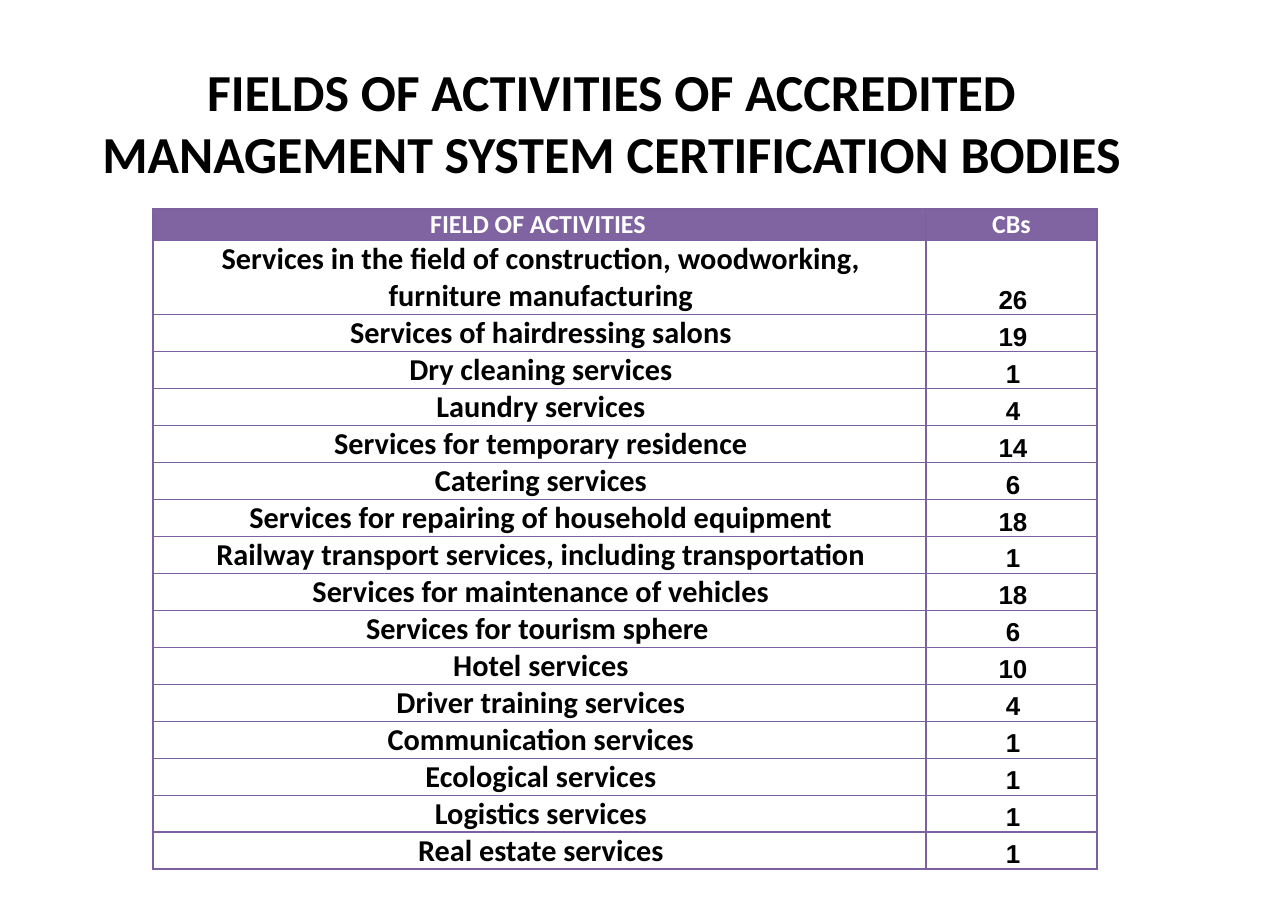
from lxml.etree import SubElement
from pptx import Presentation
from pptx.dml.color import RGBColor
from pptx.enum.text import MSO_ANCHOR, MSO_AUTO_SIZE, PP_ALIGN
from pptx.oxml.ns import qn
from pptx.util import Pt

TITLE = "FIELDS OF ACTIVITIES OF ACCREDITED \vMANAGEMENT SYSTEM CERTIFICATION BODIES "
ROWS = [
    ("FIELD OF ACTIVITIES ", "CBs"),
    ("Services in the field of construction, woodworking, furniture manufacturing", "26"),
    ("Services of hairdressing salons", "19"),
    ("Dry cleaning services", "1"),
    ("Laundry services", "4"),
    ("Services for temporary residence", "14"),
    ("Catering services", "6"),
    ("Services for repairing of household equipment", "18"),
    ("Railway transport services, including transportation", "1"),
    ("Services for maintenance of vehicles", "18"),
    ("Services for tourism sphere ", "6"),
    ("Hotel services", "10"),
    ("Driver training services", "4"),
    ("Communication services", "1"),
    ("Ecological services", "1"),
    ("Logistics services", "1"),
    ("Real estate services", "1"),
]
COLORS = {"text": "000000", "head": "8064A2", "light": "FFFFFF", "line": "7D60A0"}
WIDTHS = [773, 171]
HEIGHTS = [31, 74] + [37] * (len(ROWS) - 2)
FONTS = [("Calibri", 14), ("Arial", 12)]
SCALE = 5873


def px(n):
    return n * SCALE


def style(para, name, size, color):
    para.alignment = PP_ALIGN.CENTER
    for run in para.runs:
        run.font.name = name
        run.font.size = Pt(size)
        run.font.bold = True
        run.font.color.rgb = RGBColor.from_string(COLORS[color])


def border(cell):
    props = cell._tc.get_or_add_tcPr()
    for spot, tag in enumerate(("a:lnL", "a:lnR", "a:lnT", "a:lnB")):
        line = SubElement(props, qn(tag), w=str(Pt(0.75)))
        fill = SubElement(line, qn("a:solidFill"))
        SubElement(fill, qn("a:srgbClr"), val=COLORS["line"])
        props.insert(spot, line)


def add_title(slide):
    title = slide.shapes.title
    title.left, title.top, title.width, title.height = map(px, (64, 36, 1107, 154))
    frame = title.text_frame
    frame.text = TITLE
    frame.word_wrap = True
    frame.auto_size = MSO_AUTO_SIZE.NONE
    frame.vertical_anchor = MSO_ANCHOR.BOTTOM
    frame.margin_left = frame.margin_right = px(12)
    frame.margin_top = frame.margin_bottom = px(6)
    style(frame.paragraphs[0], "Calibri", 24, "text")


def fill_cell(cell, text, row, col):
    head = row == 0
    cell.text = text
    cell.margin_left = cell.margin_right = px(11)
    cell.margin_top = cell.margin_bottom = 0
    cell.vertical_anchor = MSO_ANCHOR.MIDDLE if head else MSO_ANCHOR.BOTTOM
    if head:
        cell.fill.solid()
        cell.fill.fore_color.rgb = RGBColor.from_string(COLORS["head"])
    else:
        cell.fill.background()
    border(cell)
    para = cell.text_frame.paragraphs[0]
    if not head or col == 0:
        para._p.get_or_add_pPr().set("marL", str(px(3)))
    name, size = ("Calibri", 12) if head else FONTS[col]
    style(para, name, size, "light" if head else "text")


def add_grid(slide):
    box = map(px, (153, 209, sum(WIDTHS), sum(HEIGHTS)))
    table = slide.shapes.add_table(len(ROWS), len(WIDTHS), *box).table
    table.horz_banding = False
    for col, width in zip(table.columns, WIDTHS):
        col.width = px(width)
    for row, height in zip(table.rows, HEIGHTS):
        row.height = px(height)
    for r, row in enumerate(ROWS):
        for c, text in enumerate(row):
            fill_cell(table.cell(r, c), text, r, c)


def main():
    deck = Presentation()
    deck.slide_width, deck.slide_height = px(1288), px(908)
    slide = deck.slides.add_slide(deck.slide_layouts[5])
    add_title(slide)
    add_grid(slide)
    deck.save("out.pptx")


if __name__ == "__main__":
    main()
